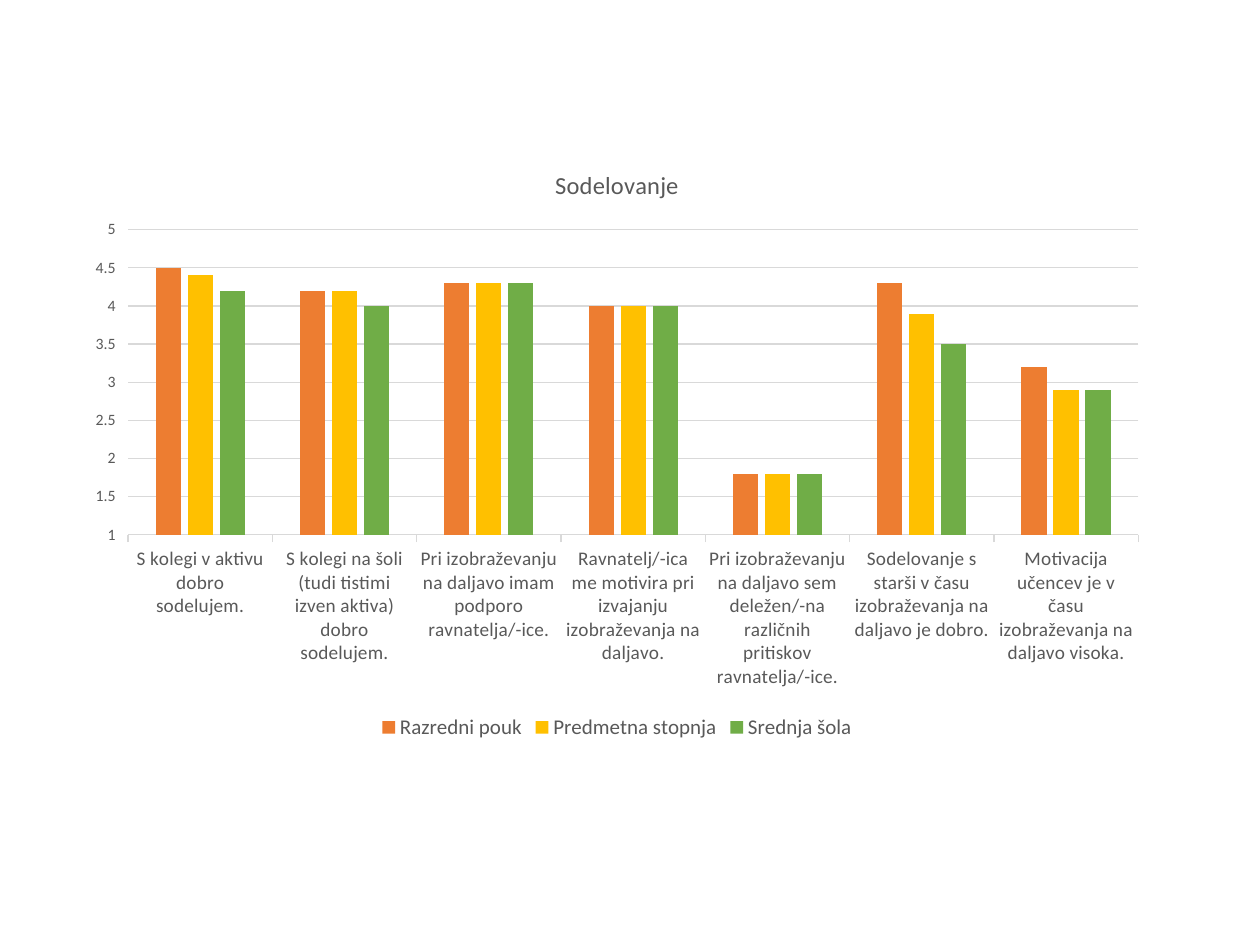
from pptx import Presentation
from pptx.chart.data import CategoryChartData
from pptx.dml.color import RGBColor
from pptx.enum.chart import XL_CHART_TYPE, XL_LEGEND_POSITION, XL_TICK_MARK
from pptx.util import Emu, Pt

EMU_PER_PX = 914400 // 126
FONT = "Calibri"
TEXT_COLOUR = "595959"
LINE_COLOUR = "D9D9D9"

CATEGORIES = [
    "S kolegi v aktivu dobro sodelujem.",
    "S kolegi na šoli (tudi tistimi izven aktiva) dobro sodelujem.",
    "Pri izobraževanju na daljavo imam podporo ravnatelja/-ice.",
    "Ravnatelj/-ica me motivira pri izvajanju izobraževanja na daljavo.",
    "Pri izobraževanju na daljavo sem deležen/-na različnih pritiskov ravnatelja/-ice.",
    "Sodelovanje s starši v času izobraževanja na daljavo je dobro.",
    "Motivacija učencev je v času izobraževanja na daljavo visoka.",
]
SERIES = [
    ("Razredni pouk", "ED7D31", [4.5, 4.2, 4.3, 4, 1.8, 4.3, 3.2]),
    ("Predmetna stopnja", "FFC000", [4.4, 4.2, 4.3, 4, 1.8, 3.9, 2.9]),
    ("Srednja šola", "70AD47", [4.2, 4, 4.3, 4, 1.8, 3.5, 2.9]),
]


def px(length):
    """Turn whole pixels into EMU."""
    return Emu(length * EMU_PER_PX)


def colour(value):
    """Turn a hex string into a colour."""
    return RGBColor.from_string(value)


def style_font(font, size):
    """Set the chart typeface, size and text colour."""
    font.name = FONT
    font.size = Pt(size)
    font.bold = False
    font.color.rgb = colour(TEXT_COLOUR)


def style_line(line):
    """Draw a thin light grey line."""
    line.color.rgb = colour(LINE_COLOUR)
    line.width = Pt(0.75)


def add_column_chart(slide, left, top, width, height):
    """Add the clustered column chart with its coloured series."""
    data = CategoryChartData(number_format="General")
    data.categories = CATEGORIES
    for name, _, values in SERIES:
        data.add_series(name, values)
    frame = slide.shapes.add_chart(
        XL_CHART_TYPE.COLUMN_CLUSTERED, px(left), px(top), px(width), px(height), data
    )
    chart = frame.chart
    style_font(chart.font, 10)
    plot = chart.plots[0]
    plot.gap_width = 219
    plot.overlap = -27
    plot.vary_by_categories = False
    for series, (_, fill, _) in zip(plot.series, SERIES):
        series.format.fill.solid()
        series.format.fill.fore_color.rgb = colour(fill)
        series.invert_if_negative = False
    return chart


def format_title(chart, text):
    """Write the chart title."""
    chart.has_title = True
    chart.chart_title.include_in_layout = False
    run = chart.chart_title.text_frame.paragraphs[0].add_run()
    run.text = text
    style_font(run.font, 14)


def format_axes(chart):
    """Set scale, ticks, gridlines and labels of both axes."""
    category_axis = chart.category_axis
    category_axis.major_tick_mark = XL_TICK_MARK.OUTSIDE
    style_line(category_axis.format.line)
    style_font(category_axis.tick_labels.font, 11)
    value_axis = chart.value_axis
    value_axis.minimum_scale = 1
    value_axis.maximum_scale = 5
    value_axis.major_unit = 0.5
    value_axis.major_tick_mark = XL_TICK_MARK.OUTSIDE
    value_axis.format.line.fill.background()
    value_axis.has_major_gridlines = True
    style_line(value_axis.major_gridlines.format.line)
    style_font(value_axis.tick_labels.font, 9)


def format_legend(chart):
    """Place the legend below the plot."""
    chart.has_legend = True
    chart.legend.position = XL_LEGEND_POSITION.BOTTOM
    chart.legend.include_in_layout = False
    style_font(chart.legend.font, 12)


def main():
    """Build and save the slide."""
    presentation = Presentation()
    presentation.slide_width = px(1260)
    presentation.slide_height = px(945)
    slide = presentation.slides.add_slide(presentation.slide_layouts[6])
    chart = add_column_chart(slide, 74, 145, 1086, 600)
    format_title(chart, "Sodelovanje")
    format_axes(chart)
    format_legend(chart)
    presentation.save("out.pptx")


if __name__ == "__main__":
    main()
